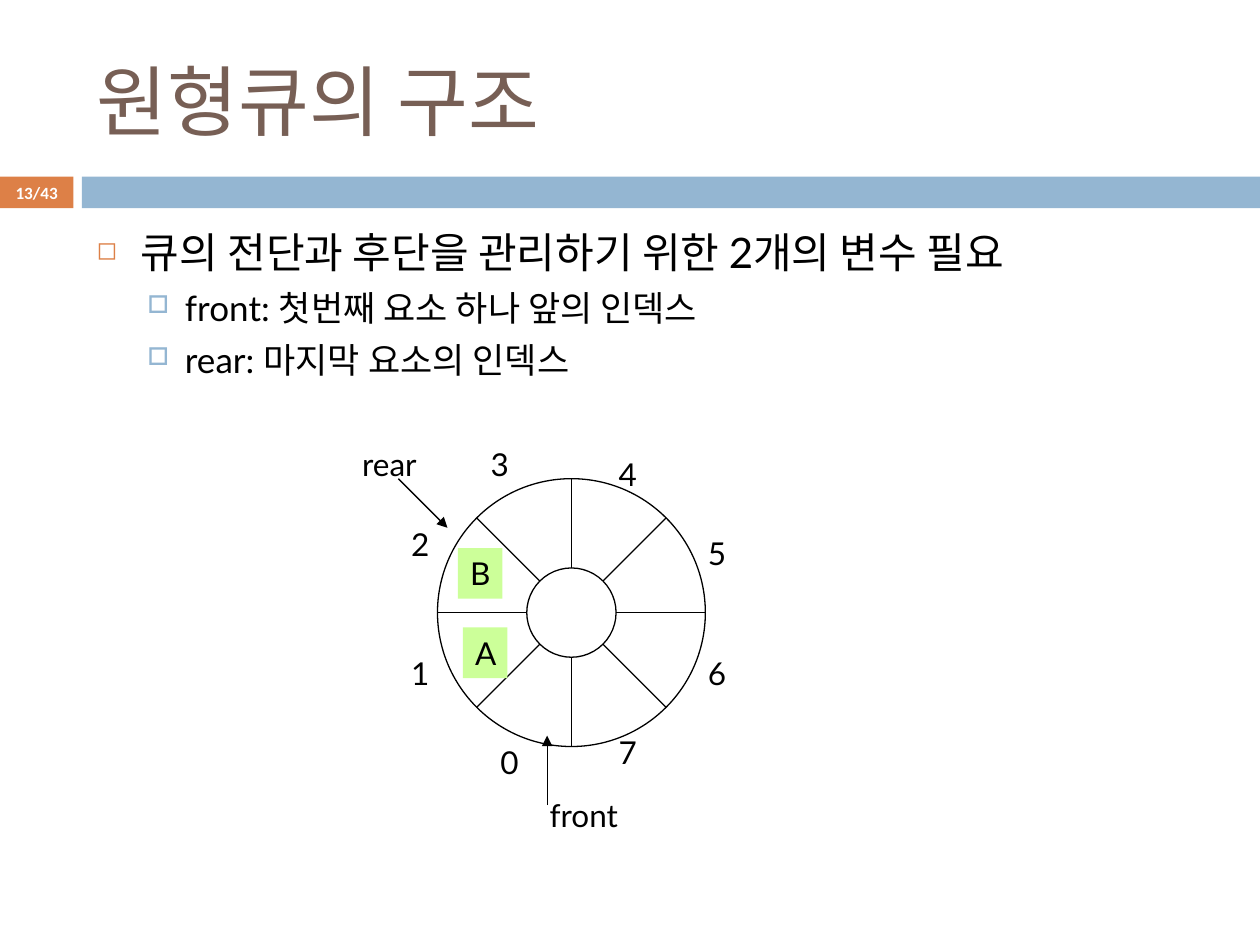
from math import cos, pi, sin

from lxml.etree import SubElement
from pptx import Presentation
from pptx.dml.color import RGBColor
from pptx.enum.shapes import MSO_CONNECTOR as Link, MSO_SHAPE as Shape
from pptx.enum.text import MSO_ANCHOR as Anchor, MSO_AUTO_SIZE as Fit, PP_ALIGN as Align
from pptx.oxml.ns import qn
from pptx.util import Cm, Pt

COLORS = {
    "title": "775F55",
    "orange": "DD8047",
    "blue": "94B6D2",
    "item": "CCFF99",
    "ink": "000000",
    "paper": "FFFFFF",
}
TITLE = {"name": "Calibri", "size": Pt(44), "color": "title"}
PAGE_NUMBER = {"name": "Calibri", "size": Pt(9.8), "bold": True, "color": "paper"}
TOPIC = {"name": "Lato", "size": Pt(24), "color": "ink"}
DETAIL = {"name": "Lato", "size": Pt(20), "color": "ink"}
LABEL = {"name": "Lato", "size": Pt(18), "color": "ink"}

# Left and top of the index labels 0 to 7, from the corner of the ring
INDEX_PLACES = [
    (1.02, 5.2), (-0.78, 3.4), (-0.78, 0.8), (0.82, -0.8),
    (3.4, -0.6), (5.2, 1), (5.2, 3.4), (3.4, 5),
]


def rgb(key):
    return RGBColor.from_string(COLORS[key])


def write(para, text, style):
    span = para.add_run()
    span.text = text
    for key, value in style.items():
        if key == "color":
            span.font.color.rgb = rgb(value)
        else:
            setattr(span.font, key, value)


def add_plain_shape(shapes, kind, left, top, width, height, fill=None):
    """Filled shapes have no outline; unfilled ones have a thin one."""
    shape = shapes.add_shape(kind, Cm(left), Cm(top), Cm(width), Cm(height))
    shape.shadow.inherit = False
    if fill:
        shape.fill.solid()
        shape.fill.fore_color.rgb = rgb(fill)
        shape.line.fill.background()
    else:
        shape.fill.background()
        shape.line.color.rgb = rgb("ink")
        shape.line.width = Pt(0.75)
    return shape


def add_line(shapes, start, end, arrow=False):
    line = shapes.add_connector(Link.STRAIGHT, *(Cm(v) for v in (*start, *end)))
    line.line.color.rgb = rgb("ink")
    line.line.width = Pt(0.75)
    if arrow:
        SubElement(line.line._get_or_add_ln(), qn("a:tailEnd"), type="triangle")
    SubElement(line._element.spPr, qn("a:effectLst"))


def label(box, text):
    frame = box.text_frame
    frame.word_wrap = False
    frame.auto_size = Fit.SHAPE_TO_FIT_TEXT
    frame.vertical_anchor = Anchor.TOP
    frame.paragraphs[0].alignment = Align.LEFT
    write(frame.paragraphs[0], text, LABEL)


def add_label(page, text, left, top, width=0.86):
    label(page.shapes.add_textbox(Cm(left), Cm(top), Cm(width), Cm(1.02)), text)


def set_bullet(para, char, color, percent, left, hanging):
    props = para._p.get_or_add_pPr()
    props.set("marL", str(Cm(left)))
    props.set("indent", str(-Cm(hanging)))
    tint = SubElement(props, qn("a:buClr"))
    SubElement(tint, qn("a:srgbClr"), val=COLORS[color])
    SubElement(props, qn("a:buSzPct"), val=str(percent * 1000))
    SubElement(props, qn("a:buChar"), char=char)


def place_title(page, left, top, width, height):
    title = page.shapes.title
    title.left, title.top, title.width, title.height = map(Cm, (left, top, width, height))
    title.text_frame.vertical_anchor = Anchor.MIDDLE
    para = title.text_frame.paragraphs[0]
    para.alignment = Align.LEFT
    write(para, "원형큐의 구조", TITLE)


def add_band(page, left, top, width, height):
    """Page number block and the bar to its right."""
    block, gap = 1.48, 0.17
    number = add_plain_shape(page.shapes, Shape.RECTANGLE, left, top, block, height, "orange")
    frame = number.text_frame
    frame.margin_top = frame.margin_bottom = 0
    frame.vertical_anchor = Anchor.MIDDLE
    frame.paragraphs[0].alignment = Align.CENTER
    write(frame.paragraphs[0], "13/43", PAGE_NUMBER)
    start = block + gap
    add_plain_shape(page.shapes, Shape.RECTANGLE, left + start, top, width - start, height, "blue")


def add_outline(page, left, top, width, height):
    frame = page.shapes.add_textbox(Cm(left), Cm(top), Cm(width), Cm(height)).text_frame
    frame.word_wrap = True
    topic = frame.paragraphs[0]
    set_bullet(topic, "◻", "orange", 60, 0.89, 0.89)
    write(topic, "큐의 전단과 후단을 관리하기 위한 2개의 변수 필요", TOPIC)
    for text in ("front: 첫번째 요소 하나 앞의 인덱스", "rear: 마지막 요소의 인덱스"):
        para = frame.add_paragraph()
        para.level = 1
        set_bullet(para, "□", "blue", 70, 1.78, 0.76)
        para.space_before = Pt(5.5)
        write(para, text, DETAIL)


def add_ring(page, left, top, size):
    """Two circles joined by eight spokes."""
    ring = page.shapes.add_group_shape().shapes
    outer, inner = size / 2, size / 6
    mid_x, mid_y = left + outer, top + outer
    for radius in (outer, inner):
        add_plain_shape(ring, Shape.OVAL, mid_x - radius, mid_y - radius, 2 * radius, 2 * radius)
    for step in range(8):
        angle = step * pi / 4
        start, end = (
            (mid_x + radius * cos(angle), mid_y + radius * sin(angle))
            for radius in (inner, outer)
        )
        add_line(ring, start, end)


def add_queue(page, left, top, size):
    """Ring with its indexes, items and the two pointers."""
    add_ring(page, left, top, size)
    for index, (x, y) in enumerate(INDEX_PLACES):
        add_label(page, str(index), left + x, top + y)
    for text, x, y in (("A", 0.51, 3), ("B", 0.41, 1.4)):
        item = add_plain_shape(
            page.shapes, Shape.RECTANGLE, left + x, top + y, 0.9, 1.02, "item")
        label(item, text)
    pointers = (
        ("front", (2.01, 6.28), 1.96, (2.21, 6.58), (2.21, 5.18)),
        ("rear", (-1.77, -0.81), 1.7, (-0.79, 0), (0.2, 0.99)),
    )
    for text, (x, y), width, start, end in pointers:
        add_label(page, text, left + x, top + y, width)
        add_line(
            page.shapes,
            (left + start[0], top + start[1]),
            (left + end[0], top + end[1]),
            arrow=True,
        )


def main():
    deck = Presentation()
    deck.slide_width, deck.slide_height = Cm(25.4), Cm(19.05)
    page = deck.slides.add_slide(deck.slide_layouts[5])
    add_band(page, 0, 3.56, 25.4, 0.64)
    place_title(page, 1.7, 0.64, 22.66, 2.74)
    add_outline(page, 1.7, 4.45, 22.66, 12.5)
    add_queue(page, 8.82, 9.65, 5.4)
    deck.save("out.pptx")


if __name__ == "__main__":
    main()
